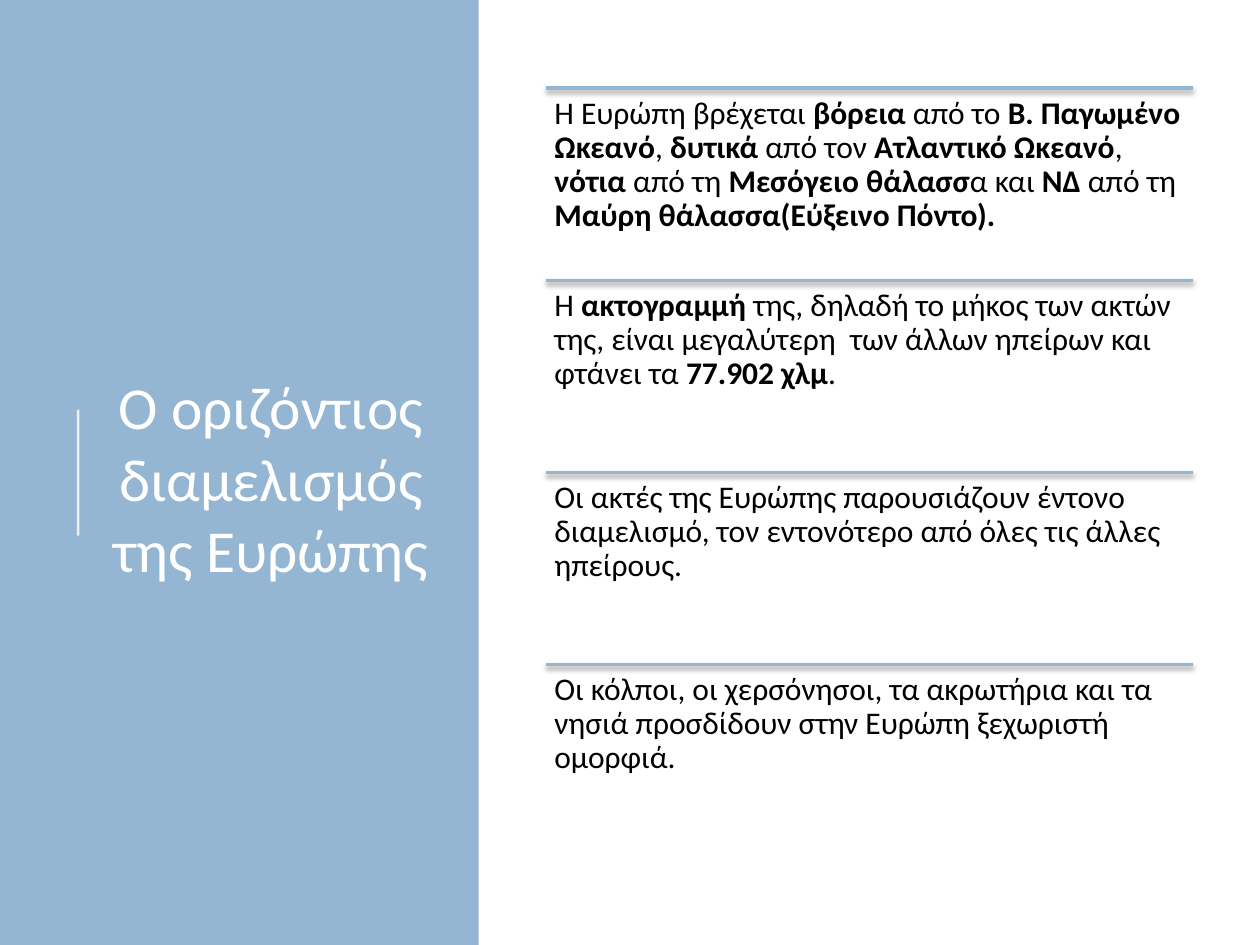
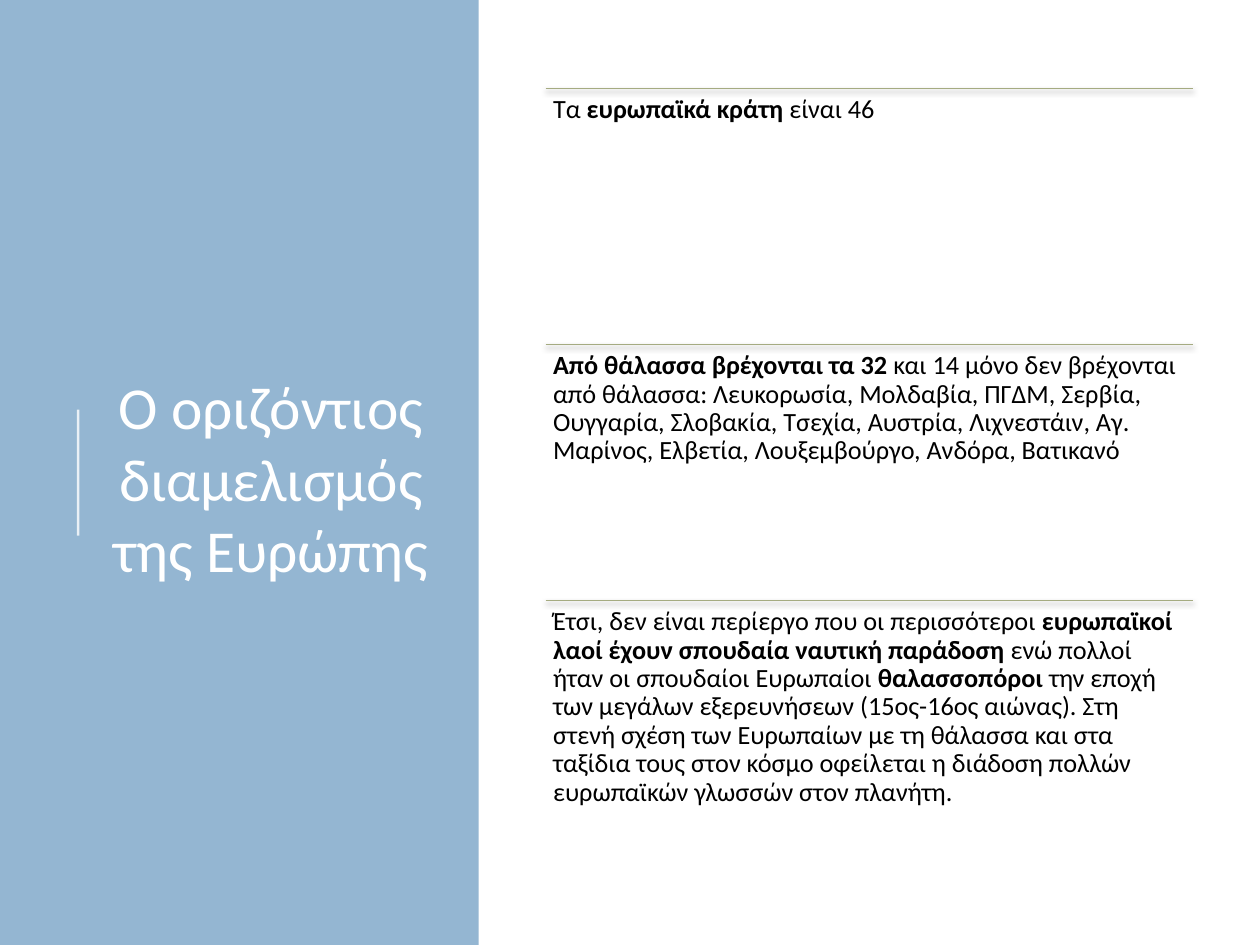
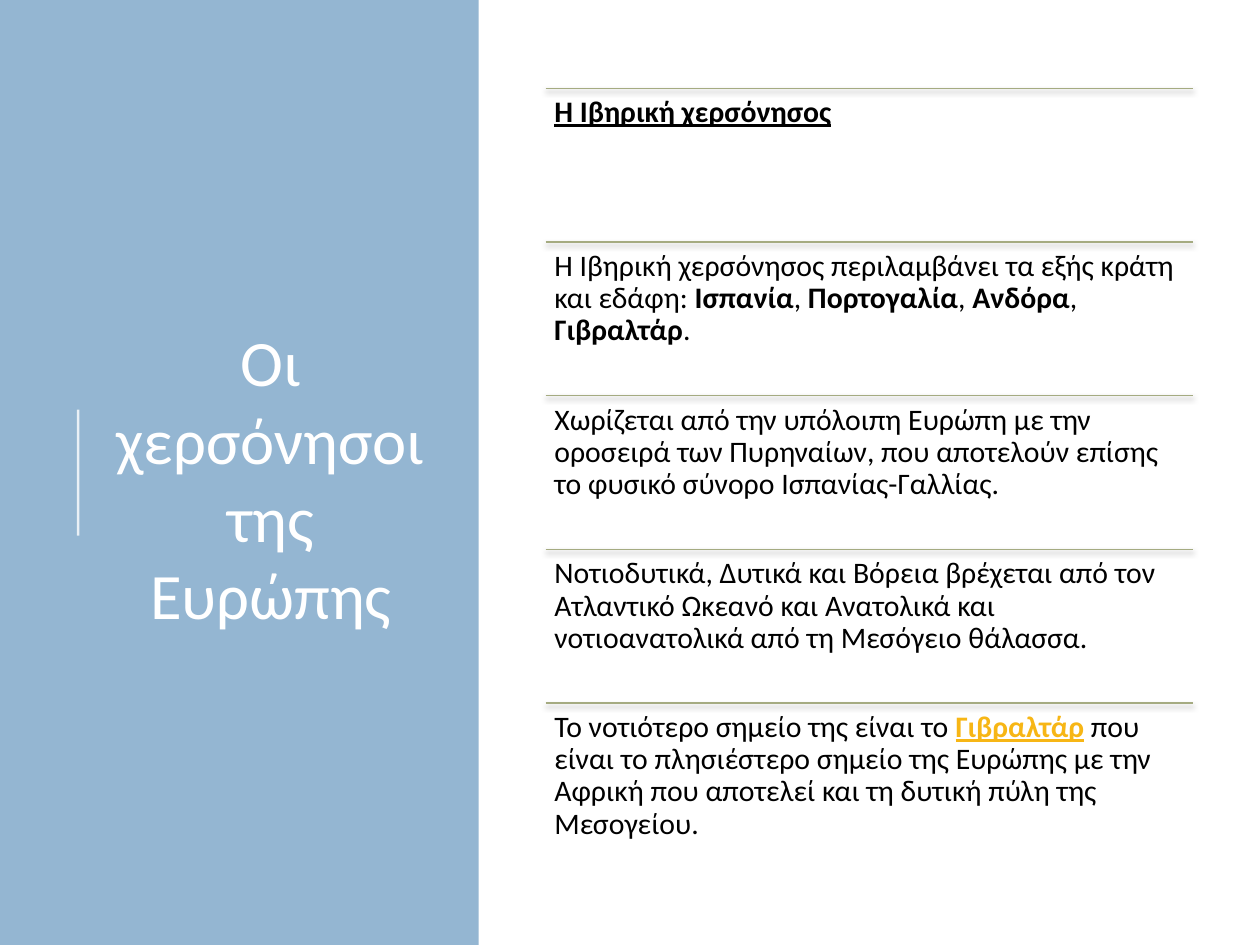
import pptx
import pptx.util
import pptx.oxml
import pptx.oxml.ns
import pptx.dml.color
import pptx.enum.shapes
import pptx.enum.text
from pptx.util import Inches, Pt

COLORS = {"band": "94B6D2", "olive": "A5AB81", "white": "FFFFFF", "black": "000000", "link": "F7B615"}
FONT = "Calibri"
BAND_W = 3.8
ROW_LEFT, ROW_RIGHT, ROW_TOP, ROWS_H = 4.33, 9.47, 0.7, 6.1


def rgb(name):
    return pptx.dml.color.RGBColor.from_string(COLORS[name])


def write(tf, text, size, color="black", align=None, spacing=None, marked="black", underline=None):
    tf.word_wrap = True
    tf.auto_size = pptx.enum.text.MSO_AUTO_SIZE.NONE
    p = tf.paragraphs[0]
    p.alignment = align
    p.line_spacing = spacing
    for i, part in enumerate(text.split("**")):
        if part:
            r = p.add_run()
            r.text = part
            r.font.name = FONT
            r.font.size = Pt(size)
            r.font.bold = i % 2 == 1
            r.font.underline = underline if i % 2 else None
            r.font.color.rgb = rgb(marked if i % 2 else color)


slides = [
    {
        "title": "Ο οριζόντιος διαμελισμός της Ευρώπης", "title_size": 34,
        "size": 18, "inset": 0.07, "rule": "band", "rule_w": 2, "shadow": (1.6, 38),
        "rows": [
            ("Η Ευρώπη βρέχεται **βόρεια** από το **Β. Παγωμένο Ωκεανό**, **δυτικά **από τον "
             "**Ατλαντικό Ωκεανό**, **νότια** από τη **Μεσόγειο θάλασσ**α και **ΝΔ** από τη "
             "**Μαύρη θάλασσα(Εύξεινο Πόντο).**", {}),
            ("Η **ακτογραμμή **της, δηλαδή το μήκος των ακτών της, είναι μεγαλύτερη  των άλλων "
             "ηπείρων και φτάνει τα **77.902 χλμ**.", {}),
            ("Οι ακτές της Ευρώπης παρουσιάζουν έντονο διαμελισμό, τον εντονότερο από όλες τις "
             "άλλες ηπείρους.", {}),
            ("Οι κόλποι, οι χερσόνησοι, τα ακρωτήρια και τα νησιά προσδίδουν στην Ευρώπη "
             "ξεχωριστή ομορφιά.", {}),
        ],
    },
    {
        "title": "Ο οριζόντιος διαμελισμός της Ευρώπης", "title_size": 34,
        "size": 15, "inset": 0.06, "rule": "olive", "rule_w": 0.75, "shadow": (1.8, 35),
        "rows": [
            ("Τα **ευρωπαϊκά κράτη** είναι 46 ", {}),
            ("**Από θάλασσα βρέχονται τα 32** και 14 μόνο δεν βρέχονται από θάλασσα: Λευκορωσία, "
             "Μολδαβία, ΠΓΔΜ, Σερβία, Ουγγαρία, Σλοβακία, Τσεχία, Αυστρία, Λιχνεστάιν, "
             "Αγ. Μαρίνος, Ελβετία, Λουξεμβούργο, Ανδόρα, Βατικανό", {}),
            ("Έτσι, δεν είναι περίεργο που οι περισσότεροι **ευρωπαϊκοί λαοί έχουν σπουδαία "
             "ναυτική παράδοση** ενώ πολλοί ήταν οι σπουδαίοι Ευρωπαίοι **θαλασσοπόροι **την "
             "εποχή των μεγάλων εξερευνήσεων (15ος-16ος αιώνας). Στη στενή σχέση των Ευρωπαίων "
             "με τη θάλασσα και στα ταξίδια τους στον κόσμο οφείλεται η διάδοση πολλών "
             "ευρωπαϊκών γλωσσών στον πλανήτη.", {}),
        ],
    },
    {
        "title": "Οι χερσόνησοι της Ευρώπης", "title_size": 37,
        "size": 17, "inset": 0.07, "rule": "olive", "rule_w": 0.75, "shadow": (1.8, 35),
        "rows": [
            ("**Η Ιβηρική χερσόνησος**", {"underline": True}),
            ("Η Ιβηρική χερσόνησος περιλαμβάνει τα εξής κράτη και εδάφη: **Ισπανία**, "
             "**Πορτογαλία**, **Ανδόρα**, **Γιβραλτάρ**.", {}),
            ("Χωρίζεται από την υπόλοιπη Ευρώπη με την οροσειρά των Πυρηναίων, που αποτελούν "
             "επίσης το φυσικό σύνορο Ισπανίας-Γαλλίας.", {}),
            ("Νοτιοδυτικά, Δυτικά και Βόρεια βρέχεται από τον Ατλαντικό Ωκεανό και Ανατολικά "
             "και νοτιοανατολικά από τη Μεσόγειο θάλασσα.", {}),
            ("Το νοτιότερο σημείο της είναι το **Γιβραλτάρ** που είναι το πλησιέστερο σημείο "
             "της Ευρώπης με την Αφρική που αποτελεί και τη δυτική πύλη της Μεσογείου.",
             {"marked": "link", "underline": True}),
        ],
    },
]

NS = pptx.oxml.ns.nsdecls("a")
STRAIGHT = pptx.enum.shapes.MSO_CONNECTOR.STRAIGHT

prs = pptx.Presentation()
prs.slide_width = Inches(10)
prs.slide_height = Inches(7.5)

for data in slides:
    s = prs.slides.add_slide(prs.slide_layouts[5])
    title = s.shapes.title

    band = s.shapes.add_shape(pptx.enum.shapes.MSO_SHAPE.RECTANGLE, 0, 0, Inches(BAND_W), prs.slide_height)
    band.shadow.inherit = False
    band.fill.solid()
    band.fill.fore_color.rgb = rgb("band")
    band.line.fill.background()
    title.element.addprevious(band.element)

    accent = s.shapes.add_connector(STRAIGHT, Inches(0.62), Inches(4.25), Inches(0.62), Inches(3.25))
    accent.line.color.rgb = rgb("white")
    accent.line.width = Pt(1.5)
    accent.element.spPr.find(".//" + pptx.oxml.ns.qn("a:srgbClr")).append(
        pptx.oxml.parse_xml(f'<a:alpha {NS} val="80000"/>'))
    accent.element.spPr.append(pptx.oxml.parse_xml(f"<a:effectLst {NS}/>"))
    title.element.addprevious(accent.element)

    title.left, title.top, title.width, title.height = (Inches(v) for v in (0.77, 0.78, 2.76, 6.02))
    title.text_frame.vertical_anchor = pptx.enum.text.MSO_ANCHOR.MIDDLE
    write(title.text_frame, data["title"], data["title_size"], color="white",
          align=pptx.enum.text.PP_ALIGN.CENTER)

    rows = s.shapes.add_group_shape()
    row_h = ROWS_H / len(data["rows"])
    distance, opacity = data["shadow"]
    for i, (text, style) in enumerate(data["rows"]):
        y = Inches(ROW_TOP + i * row_h)
        rule = rows.shapes.add_connector(STRAIGHT, Inches(ROW_LEFT), y, Inches(ROW_RIGHT), y)
        rule.line.color.rgb = rgb(data["rule"])
        rule.line.width = Pt(data["rule_w"])
        rule.element.spPr.append(pptx.oxml.parse_xml(
            f'<a:effectLst {NS}><a:outerShdw blurRad="{Pt(3.1)}" dist="{Pt(distance)}" dir="5400000" '
            f'rotWithShape="0"><a:srgbClr val="{COLORS["black"]}"><a:alpha val="{opacity * 1000}"/>'
            f"</a:srgbClr></a:outerShdw></a:effectLst>"))

        box = rows.shapes.add_textbox(Inches(ROW_LEFT), y, Inches(ROW_RIGHT - ROW_LEFT), Inches(row_h))
        tf = box.text_frame
        tf.margin_left = tf.margin_right = tf.margin_top = tf.margin_bottom = Inches(data["inset"])
        write(tf, text, data["size"], spacing=0.9, **style)

prs.save("out.pptx")
